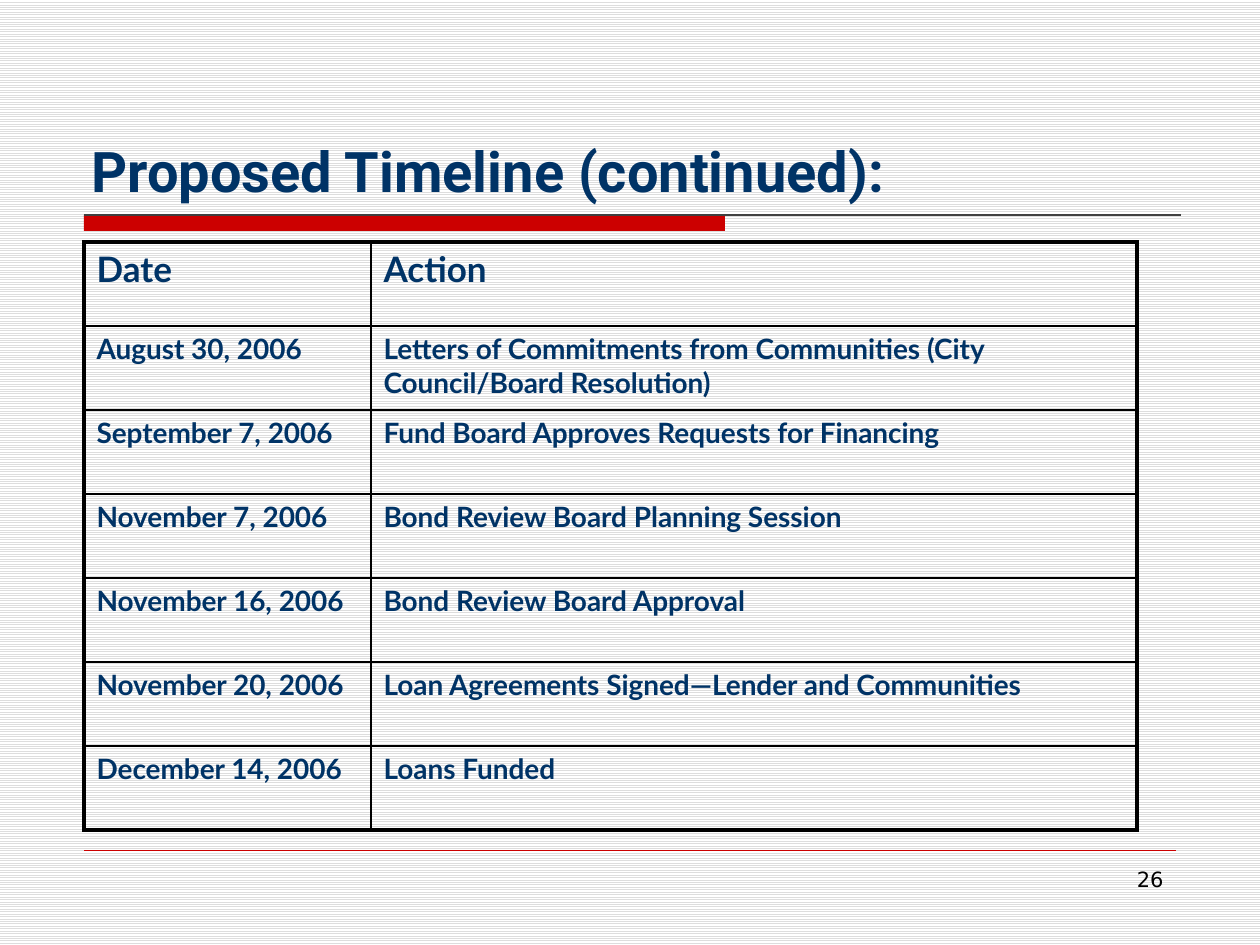
from lxml import etree
from pptx import Presentation
from pptx.dml.color import RGBColor
from pptx.enum.dml import MSO_PATTERN
from pptx.enum.shapes import MSO_CONNECTOR, MSO_SHAPE
from pptx.enum.text import MSO_ANCHOR, PP_ALIGN
from pptx.oxml.ns import qn
from pptx.util import Emu, Pt

STRIPE = MSO_PATTERN.LIGHT_HORIZONTAL
RECT, LINE = MSO_SHAPE.RECTANGLE, MSO_CONNECTOR.STRAIGHT
LEFT, RIGHT = PP_ALIGN.LEFT, PP_ALIGN.RIGHT
TOP, BOTTOM = MSO_ANCHOR.TOP, MSO_ANCHOR.BOTTOM

TITLE = "Proposed Timeline (continued):"
PAGE = "26"
STEPS = [
    ("Date", "Action"),
    ("August 30, 2006", "Letters of Commitments from Communities (City Council/Board Resolution)"),
    ("September 7, 2006", "Fund Board Approves Requests for Financing"),
    ("November 7, 2006", "Bond Review Board Planning Session"),
    ("November 16, 2006", "Bond Review Board Approval"),
    ("November 20, 2006", "Loan Agreements Signed—Lender and Communities"),
    ("December 14, 2006", "Loans Funded"),
]
COLS = (287, 766)
ROW = 84
EDGE = 84
THICK, THIN = 2.25, 1

THEME = {
    "red": "CC0000", "rule": "404040", "grid": "000000",
    "stripe": "DDDDDD", "paper": "FFFFFF",
    "title": {"name": "Roboto", "size": 32, "bold": True, "color": "003366"},
    "head": {"name": "Lato", "size": 20, "bold": True, "color": "003366"},
    "body": {"name": "Lato", "size": 16, "bold": True, "color": "003366"},
    "page": {"name": "DejaVu Sans", "size": 12, "bold": False, "color": "000000"},
}


def px(n):
    return Emu(round(n * 914400 / 126))


def rgb(key):
    return RGBColor.from_string(THEME[key])


def write(frame, text, style, align=LEFT):
    para = frame.paragraphs[0]
    para.alignment = align
    run = para.add_run()
    run.text = text
    form = dict(THEME[style])
    run.font.color.rgb = RGBColor.from_string(form.pop("color"))
    form["size"] = Pt(form["size"])
    for key, val in form.items():
        setattr(run.font, key, val)


def label(slide, box, text, style, align, anchor):
    frame = slide.shapes.add_textbox(*map(px, box)).text_frame
    frame.word_wrap = True
    frame.vertical_anchor = anchor
    write(frame, text, style, align)


def rule(slide, start, end, y, color, width):
    line = slide.shapes.add_connector(LINE, px(start), px(y), px(end), px(y))
    line.line.color.rgb = rgb(color)
    line.line.width = Pt(width)
    etree.SubElement(line._element.spPr, qn("a:effectLst"))


def border(cell, side, width):
    line = etree.SubElement(cell._tc.get_or_add_tcPr(), qn("a:ln" + side), w=str(Pt(width)))
    fill = etree.SubElement(line, qn("a:solidFill"))
    etree.SubElement(fill, qn("a:srgbClr"), val=THEME["grid"])


def schedule(slide, left, top):
    rows, cols = len(STEPS), len(COLS)
    box = (left, top, sum(COLS), ROW * rows)
    table = slide.shapes.add_table(rows, cols, *map(px, box)).table
    table.first_row = table.horz_banding = False
    for col, width in zip(table.columns, COLS):
        col.width = px(width)
    for r, step in enumerate(STEPS):
        table.rows[r].height = px(ROW)
        for c, text in enumerate(step):
            cell = table.cell(r, c)
            write(cell.text_frame, text, "body" if r else "head")
            outer = {"L": c == 0, "R": c == cols - 1, "T": r == 0, "B": r == rows - 1}
            for side, rim in outer.items():
                border(cell, side, THICK if rim else THIN)
            cell.fill.background()


def main():
    deck = Presentation()
    deck.slide_width, deck.slide_height = px(1260), px(945)
    slide = deck.slides.add_slide(deck.slide_layouts[6])
    back = slide.background.fill
    back.patterned()
    back.pattern = STRIPE
    back.fore_color.rgb = rgb("stripe")
    back.back_color.rgb = rgb("paper")

    bar = slide.shapes.add_shape(RECT, *map(px, (EDGE, 215, 641, 16)))
    bar.shadow.inherit = False
    bar.fill.solid()
    bar.fill.fore_color.rgb = rgb("red")
    bar.line.fill.background()
    rule(slide, EDGE, 1181, 215, "rule", 0.75)
    rule(slide, EDGE, 1176, 850, "red", 0.25)
    label(slide, (903, 860, 273, 66), PAGE, "page", RIGHT, TOP)
    label(slide, (79, 42, 1103, 168), TITLE, "title", LEFT, BOTTOM)
    schedule(slide, EDGE, 242)
    deck.save("out.pptx")


if __name__ == "__main__":
    main()
